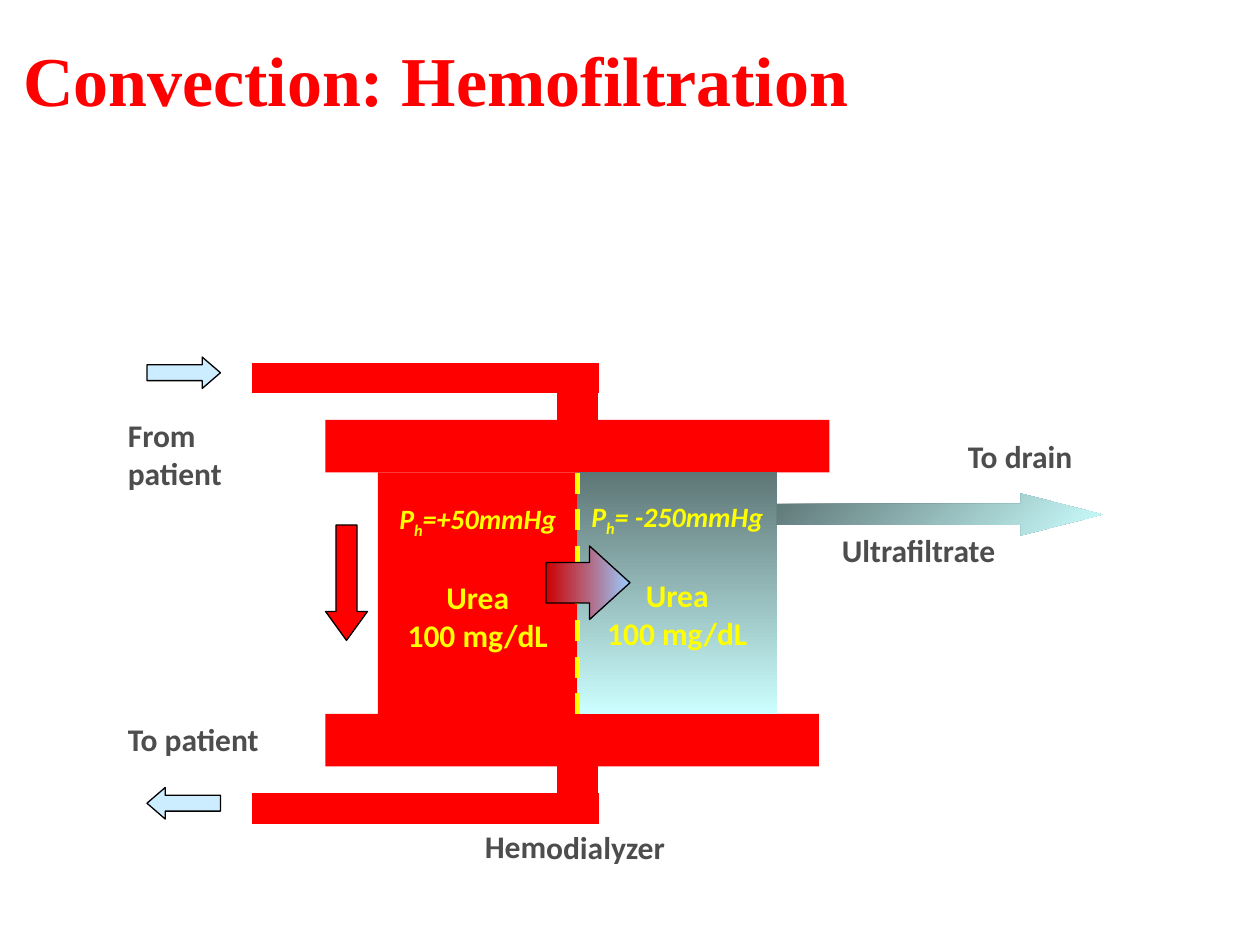
from dataclasses import dataclass

from lxml import etree
from pptx import Presentation
from pptx.dml.color import RGBColor
from pptx.enum import dml, shapes, text
from pptx.oxml import ns
from pptx.util import Pt


@dataclass(frozen=True)
class Theme:
    blood: str = "FF0000"
    flow: str = "CCECFF"
    outline: str = "000000"
    label: str = "4D4D4D"
    chamber_text: str = "FFFF00"
    filtrate: tuple = ("5E7676", "CCFFFF")
    convection: tuple = ("CC0000", "99CCFF")
    heading_font: str = "Times New Roman"
    body_font: str = "Calibri"
    heading_size: int = 40
    body_size: int = 18
    pressure_size: int = 16


THEME = Theme()
SHAPE = shapes.MSO_SHAPE


def rgb(color):
    return RGBColor.from_string(color)


def set_font(font, name, size, color, italic=False):
    font.name, font.size = name, Pt(size)
    font.bold, font.italic = True, italic
    font.color.rgb = rgb(color)


def add_title(slide, wording):
    title = slide.shapes.title
    title.left, title.top, title.width, title.height = Pt(6), Pt(0), Pt(648), Pt(90)
    frame = title.text_frame
    frame.text = wording
    frame.auto_size = text.MSO_AUTO_SIZE.NONE
    frame.vertical_anchor = text.MSO_ANCHOR.MIDDLE
    heading = frame.paragraphs[0]
    heading.alignment = text.PP_ALIGN.LEFT
    set_font(heading.font, THEME.heading_font, THEME.heading_size, THEME.blood)


def add_block(slide, kind, box, fill, angle=0, outlined=False, adjustments=()):
    """Add a preset shape; a pair of colours as fill gives a gradient."""
    block = slide.shapes.add_shape(kind, *map(Pt, box))
    block.shadow.inherit = False
    for index, value in enumerate(adjustments):
        block.adjustments[index] = value
    if isinstance(fill, tuple):
        block.fill.gradient()
        block.fill.gradient_angle = angle
        for stop, color in zip(block.fill.gradient_stops, fill):
            stop.color.rgb = rgb(color)
    else:
        block.fill.solid()
        block.fill.fore_color.rgb = rgb(fill)
    if outlined:
        block.line.color.rgb = rgb(THEME.outline)
        block.line.width = Pt(0.75)
    else:
        block.line.fill.background()
    return block


def write_chamber(chamber, pressure, top_inset):
    frame = chamber.text_frame
    frame.word_wrap = False
    frame.vertical_anchor = text.MSO_ANCHOR.TOP
    frame.margin_top = Pt(top_inset)
    first = frame.paragraphs[0]
    for part in ("P", "h", pressure):
        run = first.add_run()
        run.text = part
        if part == "h":
            run._r.get_or_add_rPr().set("baseline", "-25000")
    set_font(first.font, THEME.body_font, THEME.pressure_size, THEME.chamber_text, italic=True)
    first.space_after = Pt(22)
    for wording in ("Urea", "100 mg/dL"):
        line = frame.add_paragraph()
        line.text = wording
        set_font(line.font, THEME.body_font, THEME.body_size, THEME.chamber_text)
    for line in frame.paragraphs:
        line.alignment = text.PP_ALIGN.CENTER


def add_line(slide, start, end, color, width):
    line = slide.shapes.add_connector(shapes.MSO_CONNECTOR.STRAIGHT, *map(Pt, start + end))
    line.line.color.rgb = rgb(color)
    line.line.width = Pt(width)
    etree.SubElement(line._element.spPr, ns.qn("a:effectLst"))
    return line


def add_label(slide, wording, left, top, width=108, height=29, rotation=0):
    label = slide.shapes.add_textbox(Pt(left), Pt(top), Pt(width), Pt(height))
    label.rotation = rotation
    label.text_frame.word_wrap = True
    label.text_frame.text = wording
    set_font(label.text_frame.paragraphs[0].font, THEME.body_font, THEME.body_size, THEME.label)


def add_dialyzer(slide):
    """Draw headers, chambers and blood tubing; return the top header."""
    top_header = add_block(slide, SHAPE.RECTANGLE, (186, 240, 288, 30), THEME.blood)
    add_block(slide, SHAPE.RECTANGLE, (186, 408, 282, 30), THEME.blood)
    blood = add_block(slide, SHAPE.RECTANGLE, (216, 270, 114, 138), THEME.blood)
    write_chamber(blood, "=+50mmHg", 16.5)
    filtrate = add_block(slide, SHAPE.RECTANGLE, (330, 270, 114, 138), THEME.filtrate, angle=270)
    write_chamber(filtrate, "= -250mmHg", 15.4)

    inlet = add_line(slide, (330, 222), (330, 240), THEME.blood, 23)
    inlet.end_connect(top_header, 0)
    add_line(slide, (330, 438), (330, 456), THEME.blood, 23)
    for tube_y in (216, 462):
        add_line(slide, (144, tube_y), (342, tube_y), THEME.blood, 17.5)
    return top_header


def add_flow_arrows(slide):
    for kind, top in ((SHAPE.RIGHT_ARROW, 204), (SHAPE.LEFT_ARROW, 450)):
        add_block(slide, kind, (84, top, 42, 18), THEME.flow,
                  outlined=True, adjustments=(0.5, 0.58))
    add_block(slide, SHAPE.DOWN_ARROW, (186, 300, 24, 66), THEME.blood,
              outlined=True, adjustments=(0.5, 0.69))
    add_block(slide, SHAPE.RIGHT_ARROW, (444, 282, 186, 24), THEME.filtrate,
              angle=315, adjustments=(0.5, 1.94))


def add_labels(slide):
    add_label(slide, "From patient", 66, 234, height=51)
    add_label(slide, "To patient", 66, 408)
    add_label(slide, "To drain", 546, 246)
    add_label(slide, "Hemodialyzer", 270, 469.5, width=144, rotation=0.3)
    add_label(slide, "Ultrafiltrate", 474, 300)


def main():
    deck = Presentation()
    deck.slide_width, deck.slide_height = Pt(720), Pt(540)
    slide = deck.slides.add_slide(deck.slide_layouts[5])

    add_title(slide, "Convection: Hemofiltration")
    top_header = add_dialyzer(slide)
    add_flow_arrows(slide)
    add_labels(slide)

    membrane = add_line(slide, (330, 270), (330, 408), THEME.chamber_text, 3)
    membrane.line.dash_style = dml.MSO_LINE.DASH
    membrane.begin_connect(top_header, 2)
    add_block(slide, SHAPE.RIGHT_ARROW, (312, 312, 48, 42), THEME.convection,
              outlined=True, adjustments=(0.55, 0.55))

    deck.save("out.pptx")


if __name__ == "__main__":
    main()
